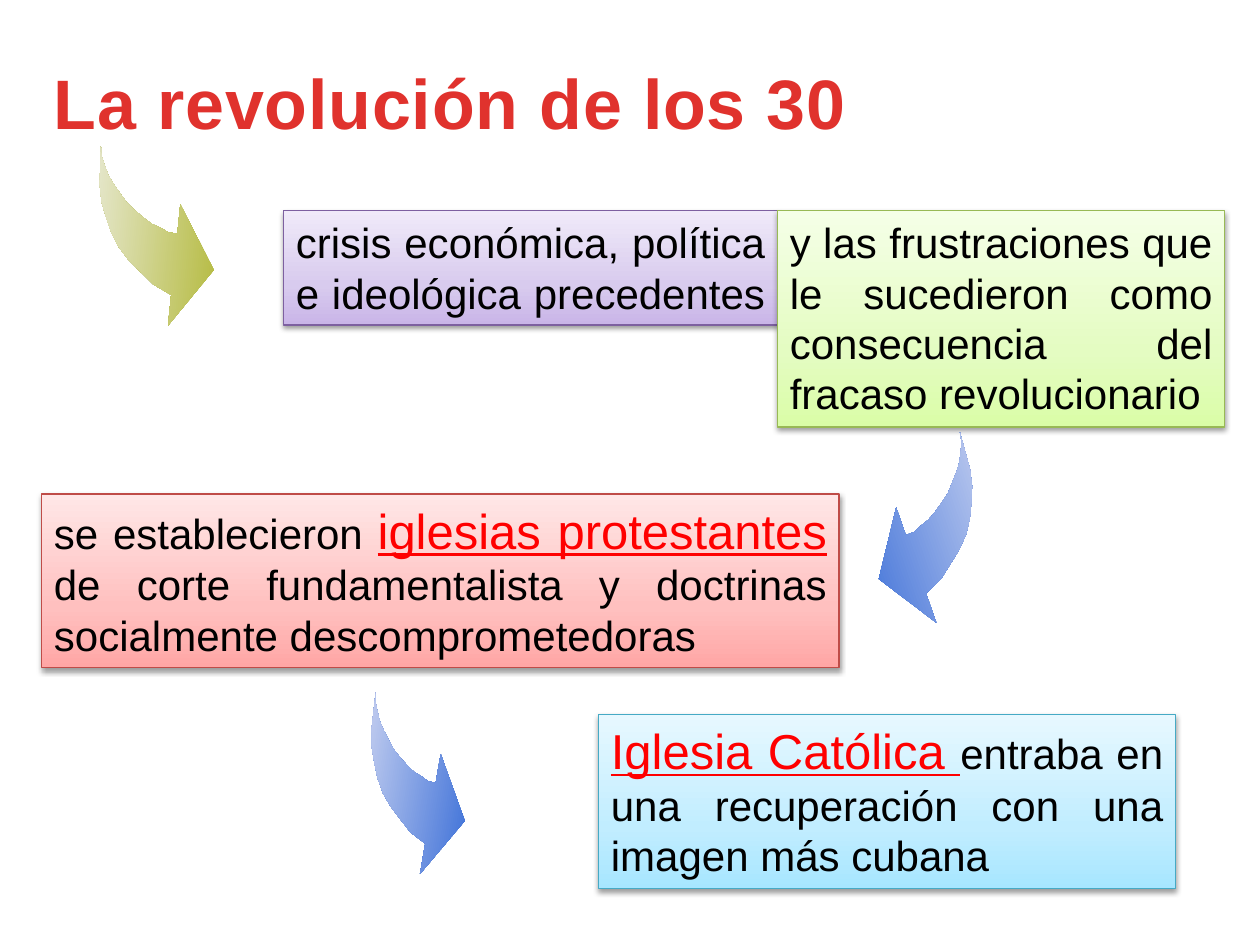
from lxml import etree
from pptx import Presentation
from pptx.dml.color import RGBColor
from pptx.enum import shapes, text
from pptx.oxml import ns
from pptx.util import Inches, Pt

FONT = "Arial"
BODY = {"size": Pt(24), "color": "000000"}
KEYWORD = {"size": Pt(28), "color": "FF0000", "underline": True}
HEADING = {"size": Pt(40), "bold": True}

# Curved arrow in a unit box, from its tail at the top left to its head at the right
ARROW = [
    (0, 0), (0.01, 0.11), (0.02, 0.22), (0.05, 0.32), (0.1, 0.41), (0.15, 0.49),
    (0.22, 0.57), (0.31, 0.64), (0.41, 0.7), (0.53, 0.77), (0.68, 0.82),
    (0.68, 1), (1, 0.65), (0.68, 0.29), (0.68, 0.46),
    (0.61, 0.46), (0.55, 0.44), (0.47, 0.42), (0.4, 0.39), (0.32, 0.35),
    (0.25, 0.31), (0.19, 0.26), (0.13, 0.21), (0.08, 0.16), (0.04, 0.1), (0.01, 0.05),
]


def rgb(value):
    return RGBColor.from_string(value)


def add_color(parent, value, alpha=None):
    color = etree.SubElement(parent, ns.qn("a:srgbClr"), val=value)
    if alpha is not None:
        etree.SubElement(color, ns.qn("a:alpha"), val=str(alpha * 1000))


def set_gradient(fill, holder, stops, angle):
    """Angle runs counter-clockwise; stops are (percent, colour)."""
    fill.gradient()
    fill.gradient_angle = angle
    stop_list = holder.find(ns.qn("a:gradFill")).find(ns.qn("a:gsLst"))
    for old_stop in list(stop_list):
        stop_list.remove(old_stop)
    for percent, color in stops:
        stop = etree.SubElement(stop_list, ns.qn("a:gs"), pos=str(percent * 1000))
        add_color(stop, color)


def add_soft_shadow(card):
    card.shadow.inherit = False
    effects = card._element.spPr.find(ns.qn("a:effectLst"))
    shadow = etree.SubElement(effects, ns.qn("a:outerShdw"), blurRad=str(Pt(3.1)),
                              dist=str(Pt(1.6)), dir="5400000", rotWithShape="0")
    add_color(shadow, "000000", 38)


def write(frame, runs, align):
    """Fill a text frame with one paragraph of (wording, format) runs."""
    for name, value in {"word_wrap": True, "vertical_anchor": text.MSO_ANCHOR.TOP,
                        "auto_size": text.MSO_AUTO_SIZE.SHAPE_TO_FIT_TEXT}.items():
        setattr(frame, name, value)
    paragraph = frame.paragraphs[0]
    paragraph.alignment = align
    for wording, style in runs:
        run = paragraph.add_run()
        run.text = wording
        run.font.name = FONT
        for name, value in style.items():
            if name == "color":
                run.font.color.rgb = rgb(value)
            else:
                setattr(run.font, name, value)
    return paragraph


def add_title(slide, box, wording):
    title = slide.shapes.add_textbox(*map(Inches, box))
    paragraph = write(title.text_frame, [(wording, HEADING)], text.PP_ALIGN.LEFT)
    run = paragraph.runs[0]
    properties = run._r.get_or_add_rPr()
    properties.set("spc", "50")
    set_gradient(run.font.fill, properties, [(25, "E0322D"), (100, "A2201C")], 270)


def add_card(slide, box, colors, border, runs):
    card = slide.shapes.add_shape(shapes.MSO_SHAPE.RECTANGLE, *map(Inches, box))
    set_gradient(card.fill, card._element.spPr, zip((0, 35, 100), colors), 90)
    card.line.color.rgb = rgb(border)
    card.line.width = Pt(0.75)
    add_soft_shadow(card)
    write(card.text_frame, runs, text.PP_ALIGN.JUSTIFY)


def add_arrow(slide, box, rotation, colors, points_left=False):
    left, top, width, height = box
    outline = [(Inches(left + width * (1 - x if points_left else x)),
                Inches(top + height * y)) for x, y in ARROW]
    builder = slide.shapes.build_freeform(*outline[0])
    builder.add_line_segments(outline[1:], close=True)
    arrow = builder.convert_to_shape()
    arrow.rotation = rotation
    # The strong colour is at the head
    set_gradient(arrow.fill, arrow._element.spPr, zip((0, 100), colors),
                 0 if points_left else 180)
    arrow.line.fill.background()
    arrow.shadow.inherit = False


def main():
    deck = Presentation()
    deck.slide_width, deck.slide_height = Inches(10), Inches(7.5)
    slide = deck.slides.add_slide(deck.slide_layouts[6])

    # Consequence: Protestant churches
    add_card(slide, (0.33, 3.92, 6.33, 1.38), ("FFA6A5", "FFC0BF", "FFE7E7"), "BF4C48",
             [("se establecieron ", BODY), ("iglesias protestantes ", KEYWORD),
              ("de corte fundamentalista y doctrinas socialmente descomprometedoras", BODY)])

    add_title(slide, (0.33, 0.42, 6.92, 0.77), "La revolución de los 30")

    # Causes: crisis and frustrations
    add_card(slide, (2.25, 1.67, 3.92, 0.91), ("C9B5E8", "D8CBEE", "F0EAF9"), "7D60A0",
             [("crisis económica, política e ideológica precedentes ", BODY)])
    add_card(slide, (6.17, 1.67, 3.55, 1.72), ("DAFDA7", "E4FCC2", "F5FFE7"), "98B955",
             [("y las frustraciones que le sucedieron como consecuencia del "
               "fracaso revolucionario", BODY)])

    # Outcome: Catholic Church
    add_card(slide, (4.75, 5.67, 4.58, 1.38), ("A7E6FF", "C1EDFF", "E7F8FF"), "46AAC5",
             [("Iglesia Católica ", KEYWORD),
              ("entraba en una recuperación con una imagen más cubana", BODY)])

    # Arrows leading from step to step
    blue, olive = ("2B64D5", "D9DDF3"), ("B2B838", "EAEBD9")
    add_arrow(slide, (6.88, 3.56, 0.99, 1.36), 340.8, blue, points_left=True)
    add_arrow(slide, (0.73, 1.21, 0.99, 1.36), 5.8, olive)
    add_arrow(slide, (2.86, 5.56, 0.87, 1.36), 9.8, blue)

    deck.save("out.pptx")


if __name__ == "__main__":
    main()
